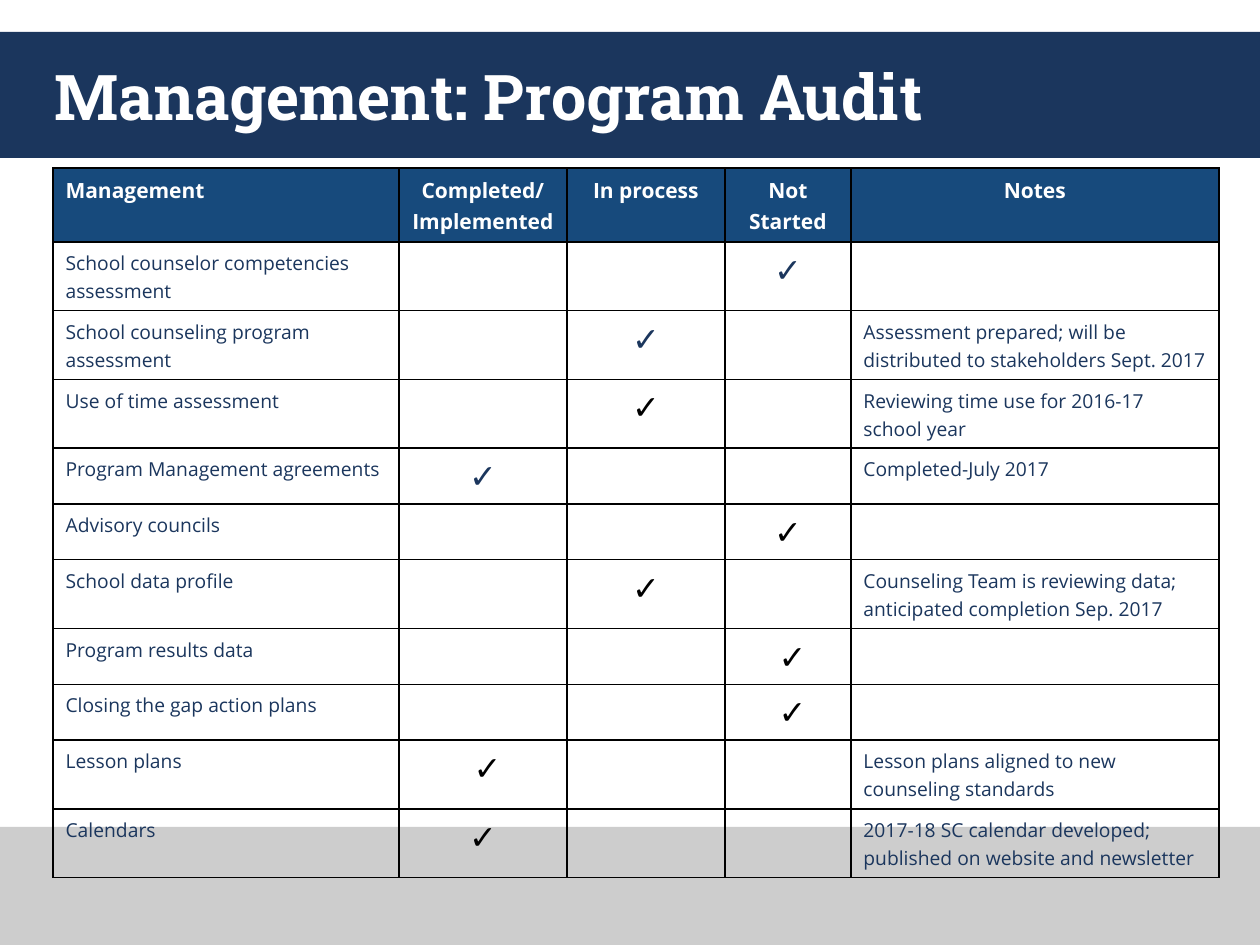
from dataclasses import dataclass
from itertools import product

from lxml.etree import SubElement
from pptx import Presentation
from pptx.dml.color import RGBColor
from pptx.enum.shapes import MSO_SHAPE
from pptx.enum.text import MSO_ANCHOR, MSO_AUTO_SIZE, PP_ALIGN
from pptx.oxml.ns import qn
from pptx.util import Emu, Pt

PX = 914400 // 126
NAVY, HEADER_BLUE, GREY, WHITE, BLACK = "1B365D", "174A7C", "CDCDCD", "FFFFFF", "000000"
COMPLETED, IN_PROCESS, NOT_STARTED = 1, 2, 3

HEADERS = ["Management", "Completed/ Implemented", "In process", "Not Started", "Notes"]
COLUMN_WIDTHS = [346, 168, 158, 126, 368]
HEADER_HEIGHT = 69
HEADER_FORMAT = {"name": "Open Sans", "size": Pt(12), "bold": True}
BODY_FORMAT = {"name": "Open Sans", "size": Pt(11), "bold": False}
CHECK_FORMAT = {"name": "Calibri", "size": Pt(19), "bold": False}
TITLE_FORMAT = {"name": "Roboto Slab", "size": Pt(36), "bold": True}


@dataclass
class AuditItem:
    name: str
    status: int
    height: int
    notes: str = ""
    check_color: str = BLACK
    check_indent: int = 0


ITEMS = [
    AuditItem("School counselor competencies assessment", NOT_STARTED, 64, check_color=NAVY),
    AuditItem("School counseling program assessment", IN_PROCESS, 63,
              "Assessment prepared; will be distributed to stakeholders Sept. 2017", NAVY),
    AuditItem("Use of time assessment", IN_PROCESS, 60,
              "Reviewing time use for 2016-17 school year"),
    AuditItem("Program Management agreements", COMPLETED, 54, "Completed-July 2017", NAVY),
    AuditItem("Advisory councils", NOT_STARTED, 54),
    AuditItem("School data profile", IN_PROCESS, 60,
              "Counseling Team is reviewing data; anticipated completion Sep. 2017"),
    AuditItem("Program results data", NOT_STARTED, 54, check_indent=9),
    AuditItem("Closing the gap action plans", NOT_STARTED, 54, check_indent=9),
    AuditItem("Lesson plans", COMPLETED, 60,
              "Lesson plans aligned to new counseling standards", check_indent=9),
    AuditItem("Calendars", COMPLETED, 60,
              "2017-18 SC calendar developed; published on website and newsletter"),
]


def px(length: int) -> Emu:
    return Emu(length * PX)


def color(value: str) -> RGBColor:
    return RGBColor.from_string(value)


def format_font(font, settings: dict, font_color: str) -> None:
    for name, value in settings.items():
        setattr(font, name, value)
    font.color.rgb = color(font_color)


def add_band(page, top: int, height: int, fill: str) -> None:
    band = page.shapes.add_shape(MSO_SHAPE.RECTANGLE, 0, px(top), px(1260), px(height))
    band.shadow.inherit = False
    band.fill.solid()
    band.fill.fore_color.rgb = color(fill)
    band.line.fill.background()


def add_borders(cell) -> None:
    """Draw a 1 pt black line on every side, placed before the cell fill."""
    properties = cell._tc.get_or_add_tcPr()
    for index, side in enumerate(("a:lnL", "a:lnR", "a:lnT", "a:lnB")):
        line = SubElement(properties, qn(side), w=str(Pt(1)))
        fill = SubElement(line, qn("a:solidFill"))
        SubElement(fill, qn("a:srgbClr"), val=BLACK)
        properties.insert(index, line)


def write_cell(cell, text: str, settings: dict, font_color: str, centered: bool) -> None:
    paragraph = cell.text_frame.paragraphs[0]
    paragraph.alignment = PP_ALIGN.CENTER if centered else PP_ALIGN.LEFT
    paragraph.line_spacing = 1.07
    if text:
        span = paragraph.add_run()
        span.text = text
        format_font(span.font, settings, font_color)
    else:
        format_font(paragraph.font, settings, font_color)


def add_audit_table(page) -> None:
    heights = [HEADER_HEIGHT] + [item.height for item in ITEMS]
    frame = page.shapes.add_table(len(heights), len(HEADERS), px(53), px(168),
                                  px(sum(COLUMN_WIDTHS)), px(sum(heights)))
    table = frame.table
    table.horz_banding = False
    for column, width in zip(table.columns, COLUMN_WIDTHS):
        column.width = px(width)
    for row, height in zip(table.rows, heights):
        row.height = px(height)

    for row, column in product(range(len(heights)), range(len(HEADERS))):
        cell = table.cell(row, column)
        add_borders(cell)
        if row == 0:
            cell.fill.solid()
            cell.fill.fore_color.rgb = color(HEADER_BLUE)
            write_cell(cell, HEADERS[column], HEADER_FORMAT, WHITE, column > 0)
            continue
        cell.fill.background()
        item = ITEMS[row - 1]
        if column == item.status:
            cell.margin_left = Emu(cell.margin_left + px(item.check_indent))
            write_cell(cell, "✓", CHECK_FORMAT, item.check_color, True)
        else:
            text = {0: item.name, len(HEADERS) - 1: item.notes}.get(column, "")
            write_cell(cell, text, BODY_FORMAT, NAVY, False)


def place_title(page, text: str) -> None:
    """Fill the title placeholder and bring it in front of the bands."""
    title = page.shapes.title
    title.left, title.top, title.width, title.height = px(42), px(32), px(1144), px(126)
    box = title.text_frame
    box.word_wrap = True
    box.auto_size = MSO_AUTO_SIZE.NONE
    box.vertical_anchor = MSO_ANCHOR.MIDDLE
    paragraph = box.paragraphs[0]
    paragraph.alignment = PP_ALIGN.LEFT
    span = paragraph.add_run()
    span.text = text
    format_font(span.font, TITLE_FORMAT, WHITE)
    page.shapes._spTree.append(title._element)


def main() -> None:
    deck = Presentation()
    deck.slide_width, deck.slide_height = px(1260), px(945)
    page = deck.slides.add_slide(deck.slide_layouts[5])
    add_band(page, 32, 126, NAVY)
    add_band(page, 827, 118, GREY)
    add_audit_table(page)
    place_title(page, "Management: Program Audit")
    deck.save("out.pptx")


if __name__ == "__main__":
    main()
